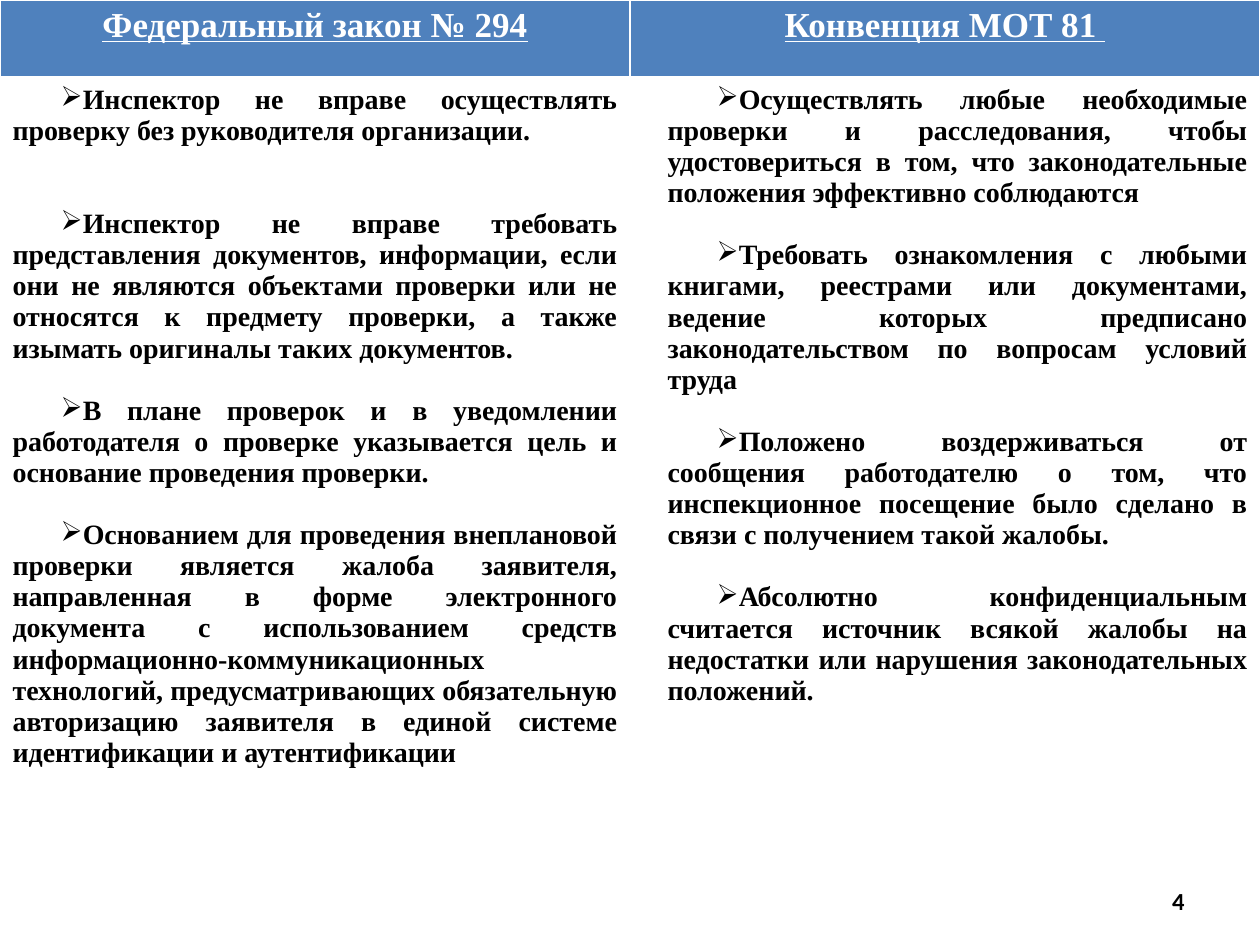
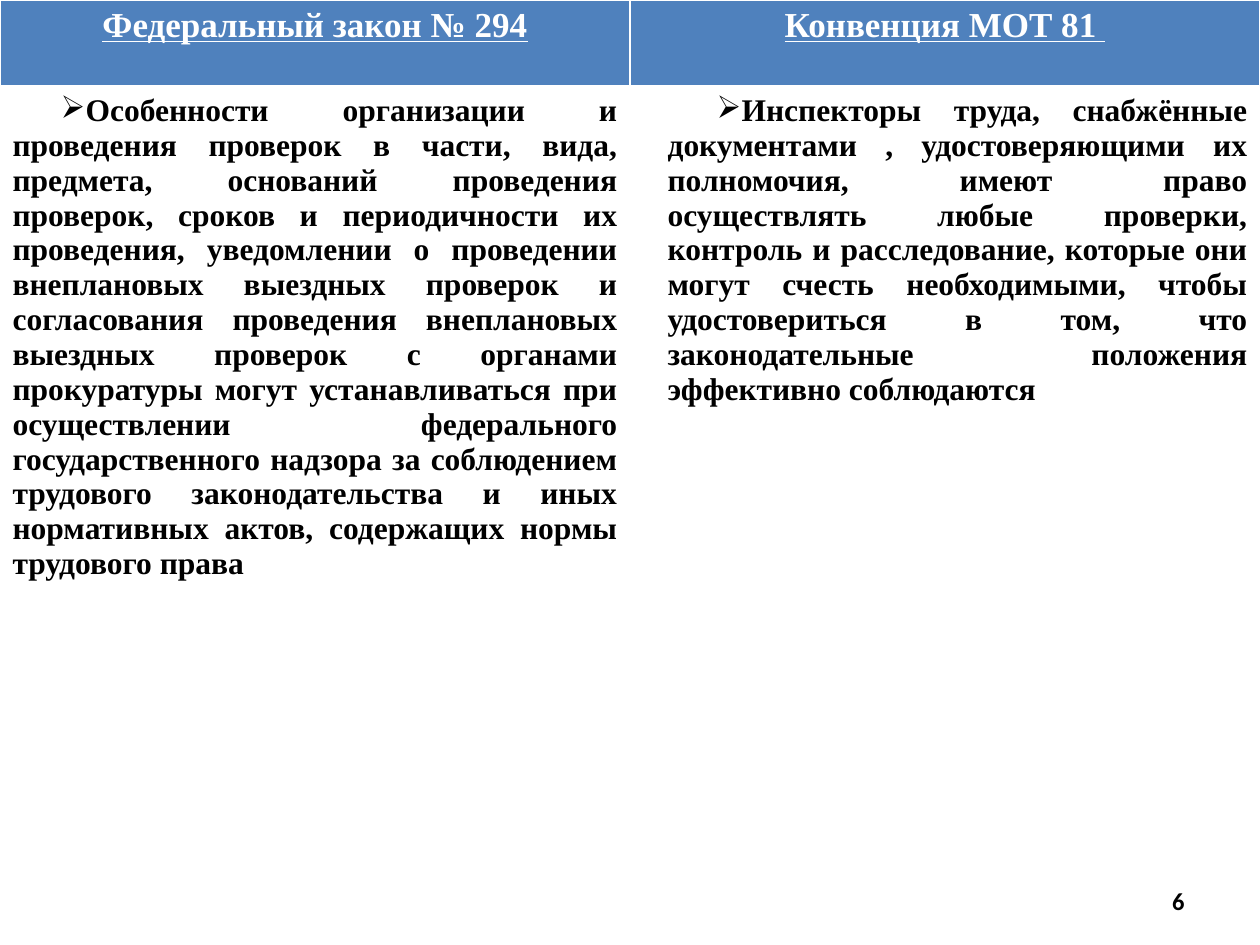
from lxml import etree
from pptx import Presentation
from pptx import util as u
from pptx.dml.color import RGBColor
from pptx.enum import text
from pptx.oxml.ns import qn

# Content: each item is (blank lines above, wording)
HEADINGS = ["Федеральный закон № 294", "Конвенция МОТ 81 "]
SLIDES = [
    {
        "number": "4", "size": 16, "rows": (78, 881),
        "columns": [
            [
                (0, "Инспектор не вправе осуществлять проверку без руководителя организации."),
                (2, "Инспектор не вправе требовать представления документов, информации, если они "
                    "не являются объектами проверки или не относятся к предмету проверки, а также "
                    "изымать оригиналы таких документов."),
                (1, "В плане проверок и в уведомлении работодателя о проверке указывается цель и "
                    "основание проведения проверки."),
                (1, "Основанием для проведения внеплановой проверки является жалоба заявителя, "
                    "направленная в форме электронного документа с использованием средств "
                    "информационно-коммуникационных технологий, предусматривающих обязательную "
                    "авторизацию заявителя в единой системе идентификации и аутентификации"),
            ],
            [
                (0, "Осуществлять любые необходимые проверки и расследования, чтобы удостовериться "
                    "в том, что законодательные положения эффективно соблюдаются"),
                (1, "Требовать ознакомления с любыми книгами, реестрами или документами, ведение "
                    "которых предписано законодательством по вопросам условий труда"),
                (1, "Положено воздерживаться от сообщения работодателю о том, что инспекционное "
                    "посещение было сделано в связи с получением такой жалобы."),
                (1, "Абсолютно конфиденциальным считается источник всякой жалобы на недостатки "
                    "или нарушения законодательных положений."),
            ],
        ],
    },
    {
        "number": "6", "size": 18, "rows": (87, 703),
        "columns": [
            [
                (0, "Особенности организации и проведения проверок в части, вида, предмета, "
                    "оснований проведения проверок, сроков и периодичности их проведения, "
                    "уведомлении о проведении внеплановых выездных проверок и согласования "
                    "проведения внеплановых выездных проверок с органами прокуратуры могут "
                    "устанавливаться при осуществлении федерального государственного надзора за "
                    "соблюдением трудового законодательства и иных нормативных актов, содержащих "
                    "нормы трудового права"),
            ],
            [
                (0, "Инспекторы труда, снабжённые документами , удостоверяющими их полномочия, "
                    "имеют право осуществлять любые проверки, контроль и расследование, которые "
                    "они могут счесть необходимыми, чтобы удостовериться в том, что "
                    "законодательные положения эффективно соблюдаются"),
            ],
        ],
    },
]

# Shared style
COLORS = {"header": "4F81BD", "white": "FFFFFF", "black": "000000"}
TABLE_FONT, NUMBER_FONT = "Times New Roman", "Calibri"
WIDTH, HEIGHT = 1260, 945
INDENTS = [(0, 48), (25, 49)]  # left margin and first line, per column
NUMBER_BOX = (903, 876, 294, 50)
LINE_HEIGHT = 1.11  # of the text size
BULLET = "➢"


def px(length):
    return u.Emu(round(length * 914400 / 126))


def style(para, align, font, size, color, underline=False):
    para.alignment = align
    para.font.name = font
    para.font.size = u.Pt(size)
    para.font.bold = True
    para.font.underline = underline
    para.font.color.rgb = RGBColor.from_string(COLORS[color])


def add_borders(cell, bottom):
    properties = cell._tc.get_or_add_tcPr()
    widths = {"lnL": 1, "lnR": 1, "lnT": 1, "lnB": bottom}
    for place, (side, points) in enumerate(widths.items()):
        line = etree.Element(qn(f"a:{side}"), w=str(u.Pt(points)))
        fill = etree.SubElement(line, qn("a:solidFill"))
        etree.SubElement(fill, qn("a:srgbClr"), val=COLORS["white"])
        properties.insert(place, line)


def fill_header(cell, heading):
    cell.fill.solid()
    cell.fill.fore_color.rgb = RGBColor.from_string(COLORS["header"])
    add_borders(cell, bottom=3)
    para = cell.text_frame.paragraphs[0]
    para.text = heading
    style(para, text.PP_ALIGN.CENTER, TABLE_FONT, 20, "white", underline=True)


def fill_body(cell, items, indents, size):
    cell.fill.background()
    add_borders(cell, bottom=1)
    frame = cell.text_frame
    for index, (blank_lines, wording) in enumerate(items):
        para = frame.add_paragraph() if index else frame.paragraphs[0]
        para.text = wording
        properties = para._p.get_or_add_pPr()
        margin, first_line = indents
        properties.set("marL", str(px(margin)))
        properties.set("indent", str(px(first_line)))
        etree.SubElement(properties, qn("a:buChar"), char=BULLET)
        para.space_before = u.Pt(blank_lines * size * LINE_HEIGHT)
        style(para, text.PP_ALIGN.JUSTIFY, TABLE_FONT, size, "black")


def add_comparison(page, content):
    rows = content["rows"]
    table = page.shapes.add_table(2, 2, 0, 0, px(WIDTH), px(sum(rows))).table
    table.horz_banding = False
    for row, height in zip(table.rows, rows):
        row.height = px(height)
    for index, items in enumerate(content["columns"]):
        table.columns[index].width = px(WIDTH // 2)
        fill_header(table.cell(0, index), HEADINGS[index])
        fill_body(table.cell(1, index), items, INDENTS[index], content["size"])


def add_number(page, number):
    frame = page.shapes.add_textbox(*map(px, NUMBER_BOX)).text_frame
    frame.word_wrap = True
    frame.vertical_anchor = text.MSO_ANCHOR.MIDDLE
    para = frame.paragraphs[0]
    para.text = number
    style(para, text.PP_ALIGN.RIGHT, NUMBER_FONT, 14, "black")


def main():
    deck = Presentation()
    deck.slide_width, deck.slide_height = px(WIDTH), px(HEIGHT)
    for content in SLIDES:
        page = deck.slides.add_slide(deck.slide_layouts[6])
        add_comparison(page, content)
        add_number(page, content["number"])
    deck.save("out.pptx")


if __name__ == "__main__":
    main()
